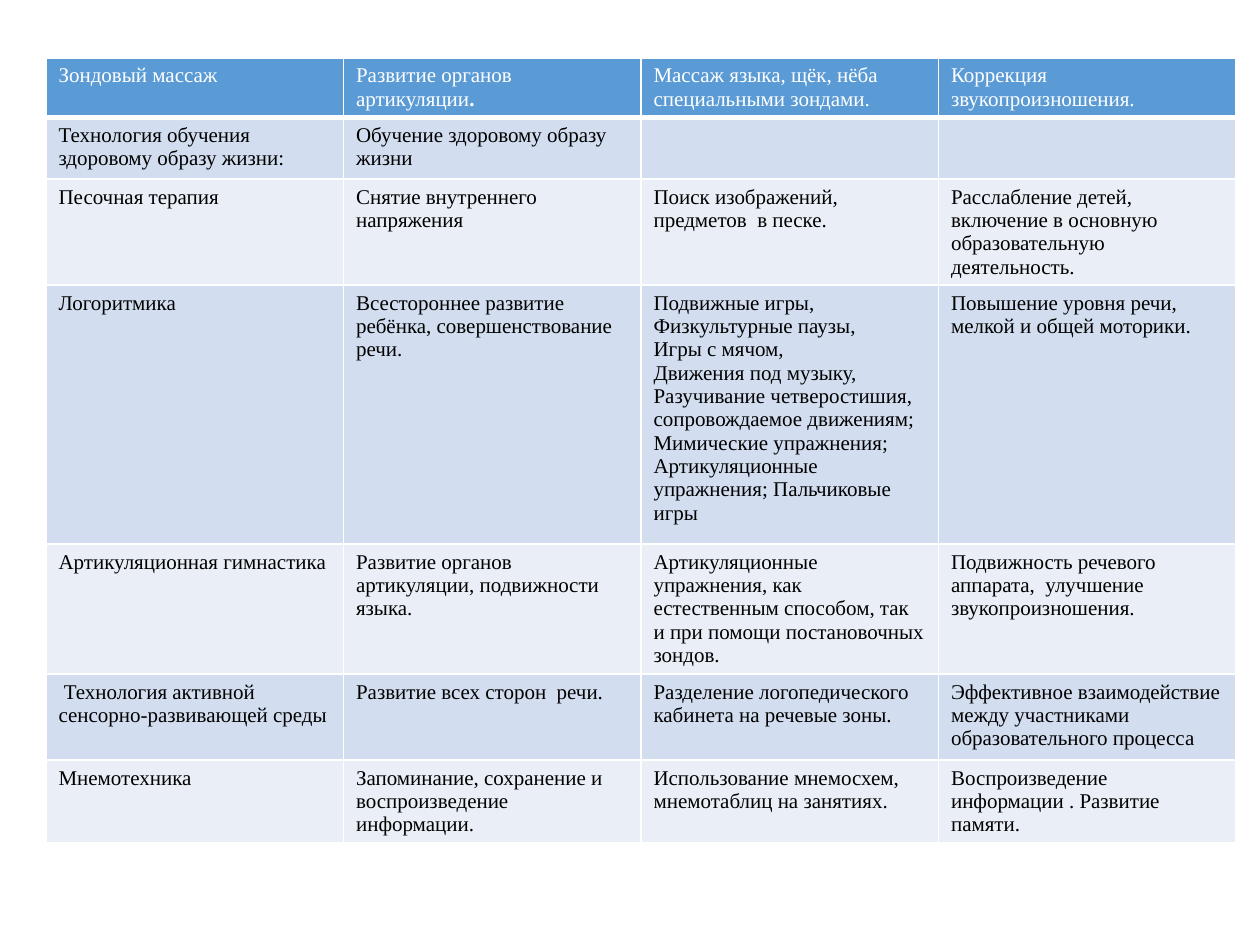
from dataclasses import dataclass

from pptx import Presentation
from pptx import util as u
from pptx.dml.color import RGBColor
from pptx.oxml import ns, xmlchemy

EMU_PER_PX = 914400 / 126


def px(length):
    return u.Emu(round(length * EMU_PER_PX))


@dataclass(frozen=True)
class Theme:
    font: str = "Times New Roman"
    size: int = 12
    header_fill: str = "5B9BD5"
    band_fills: tuple = ("D2DEEF", "EAEFF7")
    header_text: str = "FFFFFF"
    body_text: str = "000000"
    border: str = "FFFFFF"
    border_width: int = 1
    header_rule: int = 3


class SlideBuilder:
    def __init__(self, slide, theme):
        self.slide = slide
        self.theme = theme

    def table(self, left, top, width, row_heights, rows):
        columns = len(rows[0])
        grid = self.slide.shapes.add_table(
            len(rows), columns, px(left), px(top), px(width), px(sum(row_heights))
        ).table
        for column in grid.columns:
            column.width = px(width) // columns
        for index, (height, entries) in enumerate(zip(row_heights, rows)):
            grid.rows[index].height = px(height)
            for cell, entry in zip(grid.rows[index].cells, entries):
                self.cell(cell, entry, index)

    def cell(self, cell, entry, row):
        theme = self.theme
        header = row == 0
        self.borders(cell, row)
        fill = theme.header_fill if header else theme.band_fills[(row - 1) % 2]
        cell.fill.solid()
        cell.fill.fore_color.rgb = RGBColor.from_string(fill)
        if not entry:
            return
        cell.text = entry
        for paragraph in cell.text_frame.paragraphs:
            font = paragraph.font
            font.name, font.size = theme.font, u.Pt(theme.size)
            color = theme.header_text if header else theme.body_text
            font.color.rgb = RGBColor.from_string(color)
            if header:
                # The header row is bold by style; its wording is regular
                for run in paragraph.runs:
                    run.font.bold = False

    def borders(self, cell, row):
        theme = self.theme
        heavy_side = {0: "B", 1: "T"}.get(row)
        properties = cell._tc.get_or_add_tcPr()
        for side in "LRTB":
            weight = theme.header_rule if side == heavy_side else theme.border_width
            line = xmlchemy.OxmlElement(f"a:ln{side}")
            line.set("w", str(u.Pt(weight)))
            solid = xmlchemy.OxmlElement("a:solidFill")
            color = xmlchemy.OxmlElement("a:srgbClr")
            color.set("val", theme.border)
            solid.append(color)
            line.append(solid)
            properties.append(line)

    def bold_ending(self, cell, ending):
        run = cell.text_frame.paragraphs[0].add_run()
        run.text = ending
        run.font.bold = True


TECHNOLOGIES = [
    ("Зондовый массаж",
     "Развитие органов артикуляции",
     "Массаж языка, щёк, нёба специальными зондами.",
     "Коррекция звукопроизношения."),
    ("Технология обучения здоровому образу жизни:",
     "Обучение здоровому образу жизни",
     "",
     ""),
    ("Песочная терапия",
     "Снятие внутреннего напряжения",
     "Поиск изображений, предметов  в песке.",
     "Расслабление детей, включение в основную образовательную деятельность."),
    ("Логоритмика",
     "Всестороннее развитие ребёнка, совершенствование речи.",
     "Подвижные игры,\nФизкультурные паузы,\nИгры с мячом,\nДвижения под музыку,\n"
     "Разучивание четверостишия, сопровождаемое движениям; Мимические упражнения; "
     "Артикуляционные упражнения; Пальчиковые игры",
     "Повышение уровня речи, мелкой и общей моторики."),
    ("Артикуляционная гимнастика",
     "Развитие органов артикуляции, подвижности языка.",
     "Артикуляционные упражнения, как естественным способом, так и при помощи "
     "постановочных зондов.",
     "Подвижность речевого аппарата,  улучшение звукопроизношения."),
    (" Технология активной сенсорно-развивающей среды",
     "Развитие всех сторон  речи.",
     "Разделение логопедического кабинета на речевые зоны.",
     "Эффективное взаимодействие между участниками образовательного процесса"),
    ("Мнемотехника",
     "Запоминание, сохранение и воспроизведение  информации.",
     "Использование мнемосхем, мнемотаблиц на занятиях.",
     "Воспроизведение информации . Развитие памяти."),
]
ROW_HEIGHTS = [59, 62, 106, 259, 130, 86, 83]


def main():
    deck = Presentation()
    deck.slide_width, deck.slide_height = px(1260), px(945)
    builder = SlideBuilder(deck.slides.add_slide(deck.slide_layouts[6]), Theme())

    # Table of speech therapy technologies
    builder.table(46, 58, 1190, ROW_HEIGHTS, TECHNOLOGIES)

    # The full stop of the second heading is bold
    technologies = builder.slide.shapes[0].table
    builder.bold_ending(technologies.cell(0, 1), ".")

    deck.save("out.pptx")


if __name__ == "__main__":
    main()
